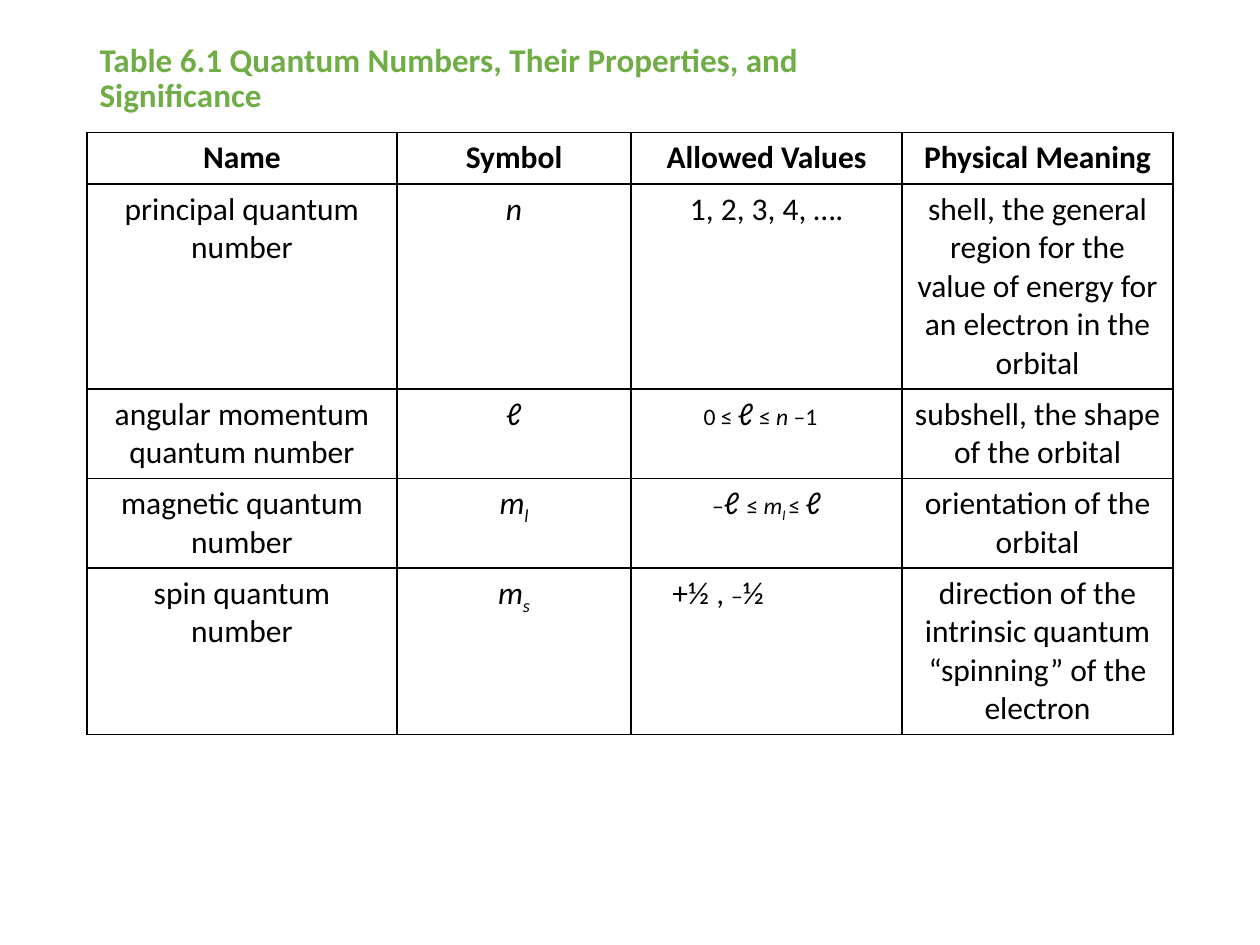
import pptx
import pptx.util
import pptx.dml.color
import pptx.enum.text
import pptx.oxml
import pptx.oxml.ns

Inches = pptx.util.Inches

BLACK = "000000"
GREEN = "70AD47"
COLUMN_WIDTHS = [2.46, 1.86, 2.15, 2.15]
ROW_HEIGHTS = [0.41, 0.41, 0.52, 0.48, 0.41]

ITALIC = {"italic": True}
SMALL = {"size": 13.5}
SMALL_ITALIC = {"size": 13.5, "italic": True}
SUBSCRIPT = {"italic": True, "baseline": -25}
SMALL_SUBSCRIPT = {"size": 13.5, **SUBSCRIPT}

HEADINGS = ["Name", "Symbol", "Allowed Values", "Physical Meaning"]
QUANTUM_NUMBERS = [
    ["principal quantum number", [("n", ITALIC)], "1, 2, 3, 4, ….",
     "shell, the general region for the value of energy for an electron in the orbital"],
    ["angular momentum quantum number", [("ℓ", ITALIC)],
     [("0 ≤ ", SMALL), ("ℓ", ITALIC), (" ≤ ", SMALL), ("n ", SMALL_ITALIC), ("–1", SMALL)],
     "subshell, the shape of the orbital"],
    ["magnetic quantum number", [("m", ITALIC), ("l", SUBSCRIPT)],
     [("–", SMALL), ("ℓ ", ITALIC), ("≤ ", SMALL), ("m", SMALL_ITALIC),
      ("l ", SMALL_SUBSCRIPT), ("≤ ", SMALL), ("ℓ", ITALIC)],
     "orientation of the orbital"],
    ["spin quantum number", [("m", ITALIC), ("s", SUBSCRIPT)],
     [("+½ , ", {}), ("–", SMALL), ("½", {})],
     "direction of the intrinsic quantum “spinning” of the electron"],
]


def rgb(value):
    return pptx.dml.color.RGBColor.from_string(value)


def add_text(paragraph, text, size=18, color=BLACK, bold=False, italic=False, baseline=0):
    run = paragraph.add_run()
    run.text = text
    run.font.name = "Calibri"
    run.font.size = pptx.util.Pt(size)
    run.font.color.rgb = rgb(color)
    run.font.bold = bold
    run.font.italic = italic
    if baseline:
        run._r.get_or_add_rPr().set("baseline", str(baseline * 1000))


def add_borders(cell, color=BLACK, width=1):
    properties = cell._tc.get_or_add_tcPr()
    for side in ("lnL", "lnR", "lnT", "lnB"):
        properties.append(pptx.oxml.parse_xml(
            f'<a:{side} {pptx.oxml.ns.nsdecls("a")} w="{pptx.util.Pt(width)}">'
            f'<a:solidFill><a:srgbClr val="{color}"/></a:solidFill></a:{side}>'))


def fill_cell(cell, content, bold=False):
    add_borders(cell)
    cell.fill.background()
    paragraph = cell.text_frame.paragraphs[0]
    paragraph.alignment = pptx.enum.text.PP_ALIGN.CENTER
    parts = [(content, {})] if isinstance(content, str) else content
    for text, text_format in parts:
        add_text(paragraph, text, bold=bold, **text_format)


def set_title(slide):
    title = slide.shapes.title
    title.left, title.top = Inches(0.69), Inches(0.4)
    title.width, title.height = Inches(8.62), Inches(0.46)
    frame = title.text_frame
    frame.word_wrap = True
    frame.auto_size = pptx.enum.text.MSO_AUTO_SIZE.NONE
    frame.vertical_anchor = pptx.enum.text.MSO_ANCHOR.MIDDLE
    paragraph = frame.paragraphs[0]
    paragraph.alignment = pptx.enum.text.PP_ALIGN.LEFT
    paragraph.line_spacing = 0.9
    heading = {"size": 18.9, "color": GREEN, "bold": True}
    add_text(paragraph, "Table 6.1 Quantum Numbers, Their Properties, and ", **heading)
    paragraph.add_line_break()
    add_text(paragraph, "Significance", **heading)


def add_quantum_table(slide):
    rows = [HEADINGS] + QUANTUM_NUMBERS
    table = slide.shapes.add_table(
        len(rows), len(HEADINGS), Inches(0.69), Inches(1.05),
        Inches(sum(COLUMN_WIDTHS)), Inches(sum(ROW_HEIGHTS))).table
    table.horz_banding = False
    for column, width in zip(table.columns, COLUMN_WIDTHS):
        column.width = Inches(width)
    for row, height in zip(table.rows, ROW_HEIGHTS):
        row.height = Inches(height)
    for row_index, contents in enumerate(rows):
        for column_index, content in enumerate(contents):
            fill_cell(table.cell(row_index, column_index), content, bold=row_index == 0)
    table.cell(2, 2).margin_right = Inches(0.2)
    table.cell(4, 2).margin_right = Inches(0.87)


def main():
    presentation = pptx.Presentation()
    presentation.slide_width = Inches(10)
    presentation.slide_height = Inches(7.5)
    slide = presentation.slides.add_slide(presentation.slide_layouts[5])
    set_title(slide)
    add_quantum_table(slide)
    presentation.save("out.pptx")


if __name__ == "__main__":
    main()
